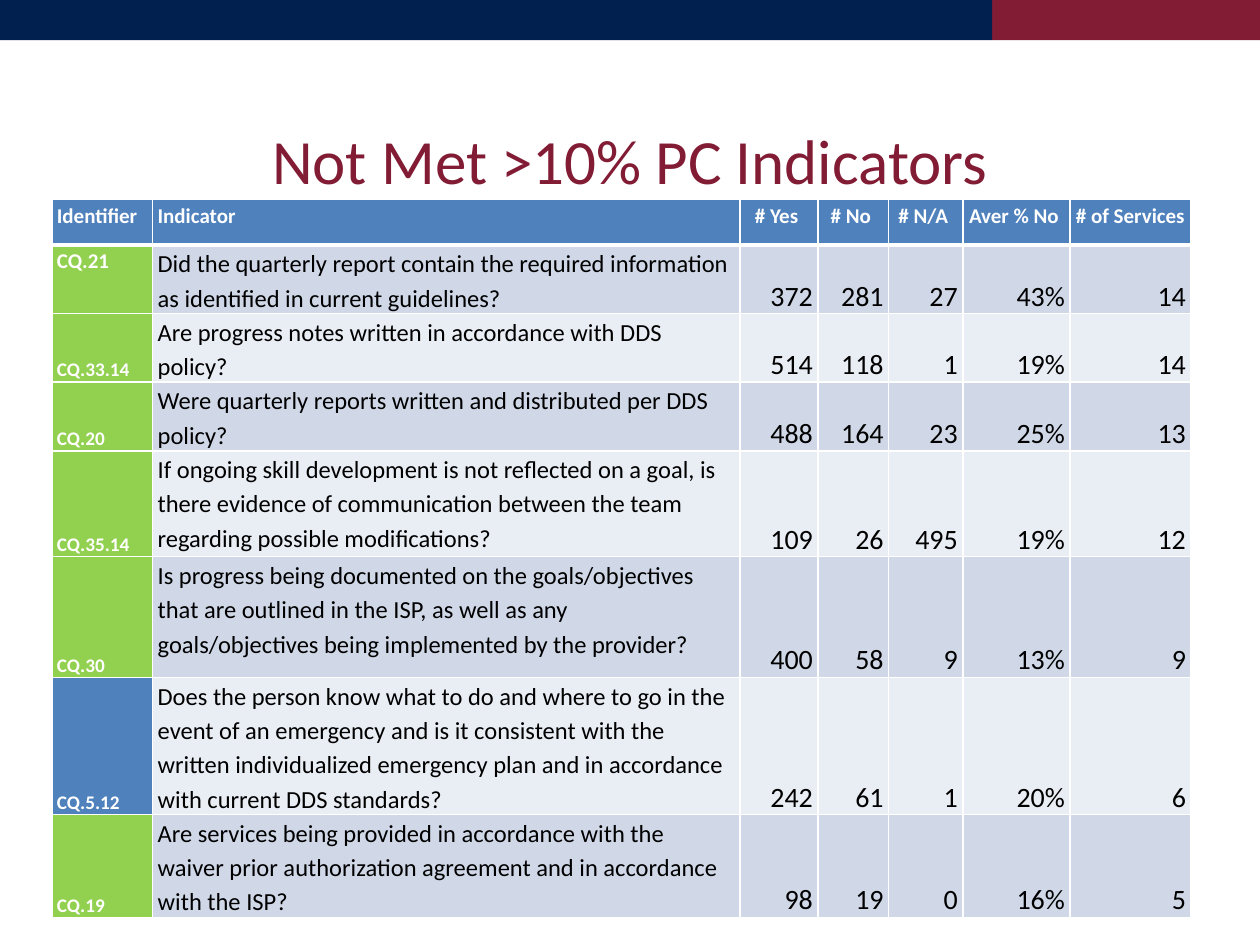
"""Build the slide listing indicators not met by more than ten percent."""
from typing import NamedTuple

from lxml.etree import SubElement
from pptx import Presentation
from pptx.dml.color import RGBColor
from pptx.enum.shapes import MSO_SHAPE
from pptx.enum.text import MSO_ANCHOR, PP_ALIGN
from pptx.oxml.ns import qn
from pptx.util import Pt

NAVY, MAROON, BLUE, GREEN = "011F4F", "821C35", "4F81BD", "92D050"
WHITE, BLACK = "FFFFFF", "000000"
BANDS = ("D0D8E8", "E9EDF4")
FONT = "Calibri"


class Bar(NamedTuple):
    left: float
    width: float
    color: str


class Column(NamedTuple):
    heading: str
    width: float
    align: PP_ALIGN


class Indicator(NamedTuple):
    identifier: str
    question: str
    figures: tuple
    height: float
    color: str = GREEN
    identifier_size: float = 11
    identifier_anchor: MSO_ANCHOR = MSO_ANCHOR.BOTTOM


class CellStyle(NamedTuple):
    fill: str
    size: float
    color: str = BLACK
    bold: bool = False
    align: PP_ALIGN = PP_ALIGN.LEFT
    anchor: MSO_ANCHOR = MSO_ANCHOR.TOP
    top_border: float = 1
    bottom_border: float = 1


BARS = (Bar(567, 153, MAROON), Bar(0, 567, NAVY))

COLUMNS = (
    Column("Identifier", 57.6, PP_ALIGN.LEFT),
    Column("Indicator", 335.6, PP_ALIGN.LEFT),
    Column("# Yes ", 44.6, PP_ALIGN.CENTER),
    Column("# No ", 40.4, PP_ALIGN.CENTER),
    Column("# N/A ", 42.4, PP_ALIGN.CENTER),
    Column("Aver % No ", 61.2, PP_ALIGN.CENTER),
    Column("# of Services", 69.2, PP_ALIGN.CENTER),
)

INDICATORS = (
    Indicator("CQ.21", "Did the quarterly report contain the required information "
              "as identified in current guidelines?",
              ("372", "281", "27", "43%", "14"), 34.6,
              identifier_size=12, identifier_anchor=MSO_ANCHOR.TOP),
    Indicator("CQ.33.14", "Are progress notes written in accordance with DDS policy?",
              ("514", "118", "1", "19%", "14"), 26),
    Indicator("CQ.20", "Were quarterly reports written and distributed per DDS policy?",
              ("488", "164", "23", "25%", "13"), 34.6),
    Indicator("CQ.35.14", "If ongoing skill development is not reflected on a goal, is "
              "there evidence of communication between the team "
              "regarding possible modifications?",
              ("109", "26", "495", "19%", "12"), 60.5),
    Indicator("CQ.30", "Is progress being documented on the goals/objectives "
              "that are outlined in the ISP, as well as any goals/objectives "
              "being implemented by the provider?",
              ("400", "58", "9", "13%", "9"), 69),
    Indicator("CQ.5.12", "Does the person know what to do and where to go in the "
              "event of an emergency and is it consistent with the "
              "written individualized emergency plan and in accordance "
              "with current DDS standards?",
              ("242", "61", "1", "20%", "6"), 78, BLUE),
    Indicator("CQ.19", "Are services being provided in accordance with the "
              "waiver prior authorization agreement and in accordance with the ISP?",
              ("98", "19", "0", "16%", "5"), 52),
)
HEADER_HEIGHT = 26


def rgb(color: str) -> RGBColor:
    return RGBColor.from_string(color)


def add_run(paragraph, text: str, size: float, color: str, bold: bool = False) -> None:
    run = paragraph.add_run()
    run.text = text
    run.font.name = FONT
    run.font.size = Pt(size)
    run.font.bold = bold
    run.font.color.rgb = rgb(color)


def add_bar(slide, bar: Bar) -> None:
    shape = slide.shapes.add_shape(
        MSO_SHAPE.RECTANGLE, Pt(bar.left), Pt(0), Pt(bar.width), Pt(23))
    shape.shadow.inherit = False
    shape.fill.solid()
    shape.fill.fore_color.rgb = rgb(bar.color)
    shape.line.fill.background()


def format_title(title) -> None:
    title.left, title.top, title.width, title.height = Pt(72), Pt(60), Pt(576), Pt(52.5)
    frame = title.text_frame
    frame.margin_left = frame.margin_right = frame.margin_top = frame.margin_bottom = Pt(0)
    frame.vertical_anchor = MSO_ANCHOR.BOTTOM
    paragraph = frame.paragraphs[0]
    paragraph.alignment = PP_ALIGN.CENTER
    paragraph.line_spacing = Pt(49)
    add_run(paragraph, "Not Met >10% PC Indicators", 36, MAROON)


def set_borders(cell, top: float, bottom: float) -> None:
    properties = cell._tc.get_or_add_tcPr()
    for edge, width in (("L", 1), ("R", 1), ("T", top), ("B", bottom)):
        line = SubElement(properties, qn(f"a:ln{edge}"), w=str(Pt(width)))
        fill = SubElement(line, qn("a:solidFill"))
        SubElement(fill, qn("a:srgbClr"), val=WHITE)


def fill_cell(cell, text: str, style: CellStyle) -> None:
    set_borders(cell, style.top_border, style.bottom_border)
    cell.fill.solid()
    cell.fill.fore_color.rgb = rgb(style.fill)
    cell.margin_left = cell.margin_right = Pt(2.9)
    cell.margin_top = cell.margin_bottom = Pt(0)
    cell.vertical_anchor = style.anchor
    paragraph = cell.text_frame.paragraphs[0]
    paragraph.alignment = style.align
    paragraph.line_spacing = 1.15
    add_run(paragraph, text, style.size, style.color, style.bold)


def add_indicator_table(slide) -> None:
    heights = [HEADER_HEIGHT] + [indicator.height for indicator in INDICATORS]
    width = sum(column.width for column in COLUMNS)
    table = slide.shapes.add_table(
        len(heights), len(COLUMNS), Pt(29.6), Pt(114), Pt(width), Pt(sum(heights))).table
    table.horz_banding = False
    for row, height in zip(table.rows, heights):
        row.height = Pt(height)
    for index, column in enumerate(COLUMNS):
        table.columns[index].width = Pt(column.width)
        fill_cell(table.cell(0, index), column.heading, CellStyle(
            BLUE, 12, WHITE, True, column.align, bottom_border=3))
    for number, indicator in enumerate(INDICATORS):
        top = 3 if number == 0 else 1
        band = BANDS[number % 2]
        cells = table.rows[number + 1].cells
        identifier, question, *figures = cells
        fill_cell(identifier, indicator.identifier, CellStyle(
            indicator.color, indicator.identifier_size, WHITE, True,
            anchor=indicator.identifier_anchor, top_border=top))
        fill_cell(question, indicator.question, CellStyle(band, 14, top_border=top))
        for cell, figure in zip(figures, indicator.figures):
            fill_cell(cell, figure, CellStyle(
                band, 16, align=PP_ALIGN.RIGHT, anchor=MSO_ANCHOR.BOTTOM, top_border=top))


def main() -> None:
    presentation = Presentation()
    presentation.slide_width, presentation.slide_height = Pt(720), Pt(540)
    slide = presentation.slides.add_slide(presentation.slide_layouts[5])
    for bar in BARS:
        add_bar(slide, bar)
    format_title(slide.shapes.title)
    add_indicator_table(slide)
    presentation.save("out.pptx")


if __name__ == "__main__":
    main()
